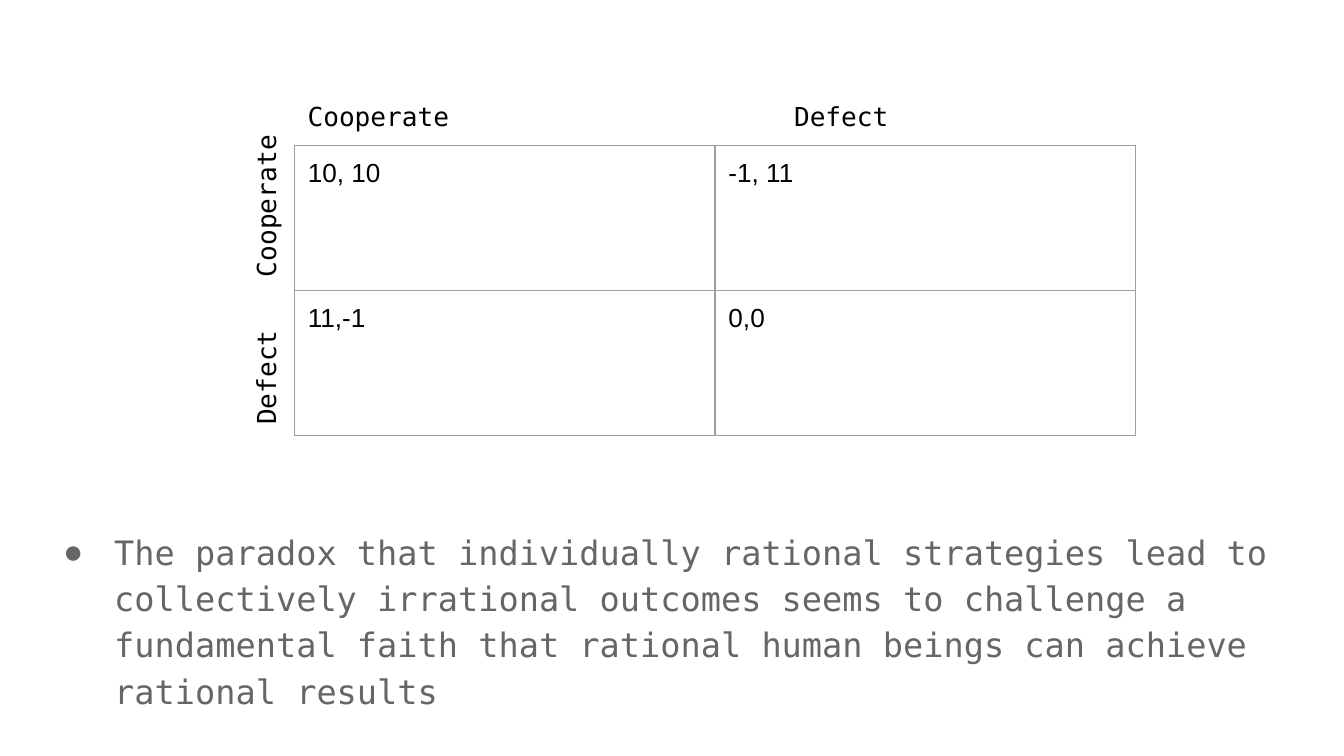
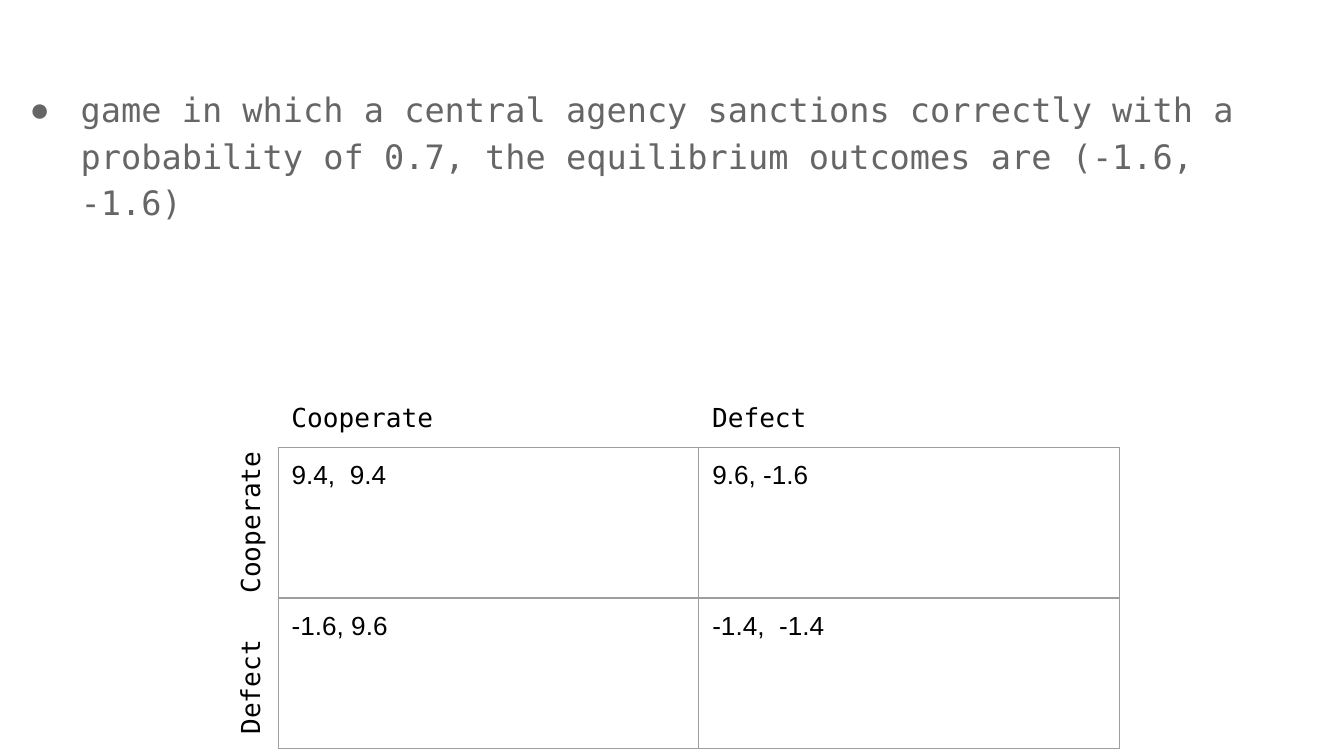
"""Build two payoff-matrix slides about cooperation and defection."""
import pptx
import pptx.util
import pptx.dml.color
import pptx.enum.text
import lxml.etree

HUES = {"ink": "000000", "body": "666666", "rule": "9E9E9E"}
MONO, SANS = "DejaVu Sans Mono", "Arial"
WIDE = 10
HIGH = WIDE * 9 / 16
PAD, BAND, COL = 0.1, 0.43, 3.13
NAMES = ("Cooperate", "Defect")
GAMES = [
    {
        "note": "The paradox that individually rational strategies lead to "
                "collectively irrational outcomes seems to challenge a "
                "fundamental faith that rational human beings can achieve "
                "rational results",
        "frame": (0.25, 0.17, 9.49, 5.09), "drop": 3.74,
        "grid": (2.19, 1.08), "row": 1.08,
        "pays": [("10, 10", "-1, 11"), ("11,-1", "0,0")],
        "top": 0.65, "heads": [(2.19, 2.27), (5.81, 2.27)],
        "sides": [(1.52, 1.28), (2.71, 1.1)],
    },
    {
        "note": "game in which a central agency sanctions correctly with a "
                "probability of 0.7, the equilibrium outcomes are (-1.6, -1.6)",
        "frame": (0, 0, 9.61, 2.64), "drop": 0.62,
        "grid": (2.07, 3.33), "row": 1.12,
        "pays": [("9.4,  9.4", "9.6, -1.6"), ("-1.6, 9.6", "-1.4,  -1.4")],
        "top": 2.89, "heads": [(2.07, 2.89), (5.2, 2.94)],
        "sides": [(3.81, 1.41), (4.99, 1.15)],
    },
]


def inch(*nums):
    return [pptx.util.Inches(n) for n in nums]


def style(para, face, size, hue):
    para.font.name, para.font.size = face, pptx.util.Pt(size)
    para.font.color.rgb = pptx.dml.color.RGBColor.from_string(HUES[hue])


def pad(box, top=PAD):
    box.margin_left, box.margin_top, box.margin_right, box.margin_bottom = inch(
        PAD, top, PAD, PAD)


def node(root, tag, **attrs):
    return lxml.etree.SubElement(root, pptx.oxml.ns.qn("a:" + tag), attrs)


def tint(root, hue):
    node(root, "srgbClr", val=HUES[hue])


def add_note(slide, game):
    box = slide.placeholders[1]
    box.left, box.top, box.width, box.height = inch(*game["frame"])
    frame = box.text_frame
    frame.auto_size = pptx.enum.text.MSO_AUTO_SIZE.NONE
    frame.vertical_anchor = pptx.enum.text.MSO_ANCHOR.TOP
    pad(frame, game["drop"])
    frame.text = game["note"]
    para = frame.paragraphs[0]
    para.line_spacing, para.space_before = 1.15, pptx.util.Pt(0)
    props = para._p.get_or_add_pPr()
    left, back = inch(0.5, -0.38)
    props.set("marL", str(left))
    props.set("indent", str(back))
    tint(node(props, "buClr"), "body")
    node(props, "buFont", typeface=SANS)
    node(props, "buChar", char="●")
    style(para, MONO, 18, "body")


def add_label(slide, text, left, top, width, turn=0):
    box = slide.shapes.add_textbox(*inch(left, top, width, BAND))
    box.rotation = turn
    frame = box.text_frame
    frame.word_wrap = True
    pad(frame)
    frame.text = text
    style(frame.paragraphs[0], MONO, 14, "ink")


def add_grid(slide, game):
    rows, cols = len(game["pays"]), len(NAMES)
    size = (cols * COL, rows * game["row"])
    table = slide.shapes.add_table(rows, cols, *inch(*game["grid"], *size)).table
    table.first_row = table.horz_banding = False
    for col in table.columns:
        col.width = pptx.util.Inches(COL)
    for row, pays in zip(table.rows, game["pays"]):
        row.height = pptx.util.Inches(game["row"])
        for cell, pay in zip(row.cells, pays):
            cell.text = pay
            pad(cell)
            style(cell.text_frame.paragraphs[0], SANS, 14, "ink")
            props = cell._tc.get_or_add_tcPr()
            for side in "LRTB":
                line = node(props, "ln" + side, w=str(pptx.util.Pt(0.75)))
                tint(node(line, "solidFill"), "rule")
            cell.fill.background()


def main():
    deck = pptx.Presentation()
    deck.slide_width, deck.slide_height = inch(WIDE, HIGH)
    for game in GAMES:
        slide = deck.slides.add_slide(deck.slide_layouts[1])
        title = slide.shapes.title.element
        title.getparent().remove(title)
        add_note(slide, game)
        add_grid(slide, game)
        edge = game["grid"][0]
        for name, head, side in zip(NAMES, game["heads"], game["sides"]):
            left, width = head
            add_label(slide, name, left, game["top"], width)
            mid, span = side
            add_label(slide, name, edge - (BAND + span) / 2, mid - BAND / 2,
                      span, 270)
    deck.save("out.pptx")


if __name__ == "__main__":
    main()
